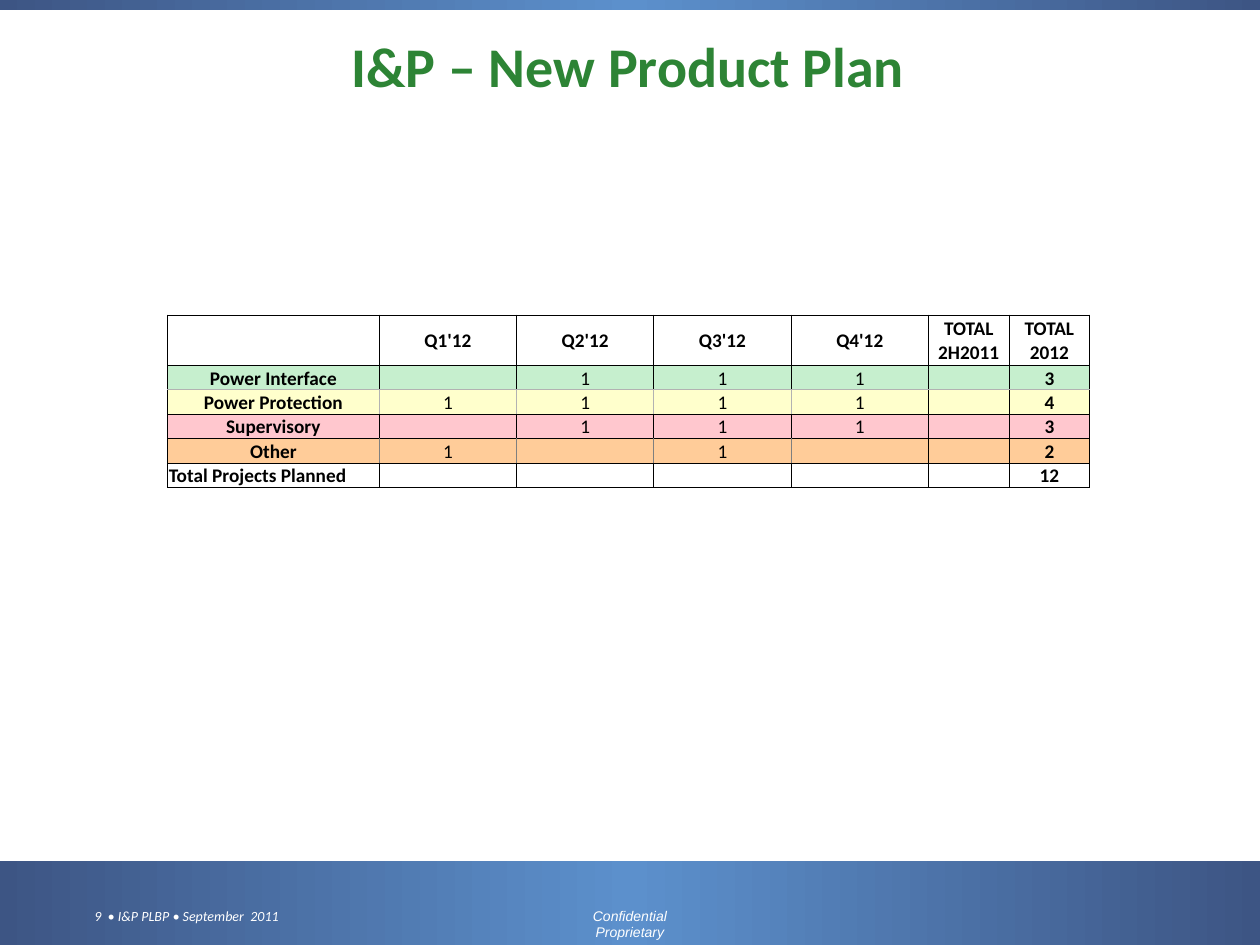
from copy import deepcopy

from lxml import etree
from pptx import Presentation
from pptx import util as u
from pptx.dml.color import RGBColor
from pptx.enum import shapes, text
from pptx.oxml.ns import qn

NAVY = RGBColor(0x3D, 0x55, 0x84)
SKY = RGBColor(0x5C, 0x90, 0xCC)
GREEN = RGBColor(0x2D, 0x84, 0x35)
WHITE = RGBColor(0xFF, 0xFF, 0xFF)
BLACK = RGBColor(0, 0, 0)
LIGHT_GRAY = RGBColor(0xB2, 0xB2, 0xB2)
GRAY = RGBColor(0x7F, 0x7F, 0x7F)
MINT = RGBColor(0xC6, 0xEF, 0xCE)
CREAM = RGBColor(0xFF, 0xFF, 0xCC)
PINK = RGBColor(0xFF, 0xC7, 0xCE)
ORANGE = RGBColor(0xFF, 0xCC, 0x99)

QUARTERS = range(1, 5)
COLUMN_WIDTHS = [1.68] + [1.09] * 4 + [0.64] * 2
ROW_HEIGHTS = [0.4] + [0.19] * 5
# Cell texts, fill, colour of the lines between quarters, colour of the bottom line
PLAN_ROWS = [
    (["", "Q1'12", "Q2'12", "Q3'12", "Q4'12", "TOTAL 2H2011", "TOTAL 2012"], WHITE, BLACK, BLACK),
    (["Power Interface", "", "1", "1", "1", "", "3"], MINT, BLACK, LIGHT_GRAY),
    (["Power Protection", "1", "1", "1", "1", "", "4"], CREAM, LIGHT_GRAY, BLACK),
    (["Supervisory", "", "1", "1", "1", "", "3"], PINK, BLACK, BLACK),
    (["Other", "1", "", "1", "", "", "2"], ORANGE, GRAY, BLACK),
    (["Total Projects Planned", "", "", "", "", "", "12"], WHITE, BLACK, BLACK),
]


def format_runs(paragraph, size, color, font="Calibri", bold=False, italic=False):
    for run in paragraph.runs:
        run.font.name = font
        run.font.size = u.Pt(size)
        run.font.bold = bold
        run.font.italic = italic
        run.font.color.rgb = color


def add_band(slide, top, height):
    band = slide.shapes.add_shape(
        shapes.MSO_SHAPE.RECTANGLE, 0, u.Inches(top), u.Inches(10), u.Inches(height))
    band.shadow.inherit = False
    band.line.fill.background()
    band.fill.gradient()
    band.fill.gradient_angle = 0
    # The default gradient has two stops; a third one goes in the middle
    stops = band.fill.gradient_stops
    for stop in stops:
        stop.color.rgb = NAVY
    first = band.fill._fill._gradFill.find(qn("a:gsLst"))[0]
    first.addnext(deepcopy(first))
    middle = band.fill.gradient_stops[1]
    middle.position = 0.5
    middle.color.rgb = SKY


def add_footer(slide, left, width, words, font, alignment):
    box = slide.shapes.add_textbox(
        u.Inches(left), u.Inches(7.15), u.Inches(width), u.Inches(0.23))
    box.text_frame.word_wrap = True
    paragraph = box.text_frame.paragraphs[0]
    paragraph.text = words
    paragraph.alignment = alignment
    format_runs(paragraph, 8, WHITE, font, italic=True)


def set_title(slide, words):
    title = slide.shapes.title
    title.left, title.top = u.Inches(0.07), u.Inches(0.22)
    title.width, title.height = u.Inches(9.83), u.Inches(0.59)
    title.text_frame.text = words
    title.text_frame.vertical_anchor = text.MSO_ANCHOR.MIDDLE
    paragraph = title.text_frame.paragraphs[0]
    paragraph.alignment = text.PP_ALIGN.CENTER
    format_runs(paragraph, 32, GREEN, bold=True)


def set_borders(cell, colors):
    properties = cell._tc.get_or_add_tcPr()
    for side, color in zip("LRTB", colors):
        line = etree.SubElement(properties, qn(f"a:ln{side}"), w=str(u.Pt(0.5)))
        fill = etree.SubElement(line, qn("a:solidFill"))
        etree.SubElement(fill, qn("a:srgbClr"), val=str(color))


def fill_cell(cell, words, color, bold, alignment):
    cell.fill.solid()
    cell.fill.fore_color.rgb = color
    cell.vertical_anchor = text.MSO_ANCHOR.MIDDLE
    cell.margin_left = cell.margin_right = cell.margin_top = u.Inches(0.01)
    cell.margin_bottom = 0
    paragraph = cell.text_frame.paragraphs[0]
    paragraph.alignment = alignment
    if words:
        paragraph.text = words
        format_runs(paragraph, 11, BLACK, bold=bold)
    else:
        # Keeps an empty cell from stretching its row
        etree.SubElement(paragraph._p, qn("a:endParaRPr"), sz="1100")


def add_plan_table(slide):
    table = slide.shapes.add_table(
        len(ROW_HEIGHTS), len(COLUMN_WIDTHS), u.Inches(1.33), u.Inches(2.5),
        u.Inches(sum(COLUMN_WIDTHS)), u.Inches(sum(ROW_HEIGHTS))).table
    for column, width in zip(table.columns, COLUMN_WIDTHS):
        column.width = u.Inches(width)
    for row, height in zip(table.rows, ROW_HEIGHTS):
        row.height = u.Inches(height)

    top = BLACK
    last_row = len(PLAN_ROWS) - 1
    for i, (words, color, inner, bottom) in enumerate(PLAN_ROWS):
        for j, word in enumerate(words):
            cell = table.cell(i, j)
            left = inner if j in QUARTERS else BLACK
            right = inner if j + 1 in QUARTERS else BLACK
            set_borders(cell, (left, right, top, bottom))
            is_total_label = i == last_row and j == 0
            alignment = text.PP_ALIGN.LEFT if is_total_label else text.PP_ALIGN.CENTER
            fill_cell(cell, word, color, i == 0 or j not in QUARTERS, alignment)
        top = bottom


def main():
    presentation = Presentation()
    presentation.slide_width = u.Inches(10)
    presentation.slide_height = u.Inches(7.5)
    slide = presentation.slides.add_slide(presentation.slide_layouts[5])

    # Bands and footer
    add_band(slide, 6.83, 0.67)
    add_footer(slide, 0.65, 2.66, "9  • I&P PLBP • September  2011",
               "Calibri", text.PP_ALIGN.LEFT)
    add_footer(slide, 4.33, 1.34, "Confidential Proprietary",
               "Arial", text.PP_ALIGN.CENTER)
    add_band(slide, 0, 0.08)

    # Title and plan
    set_title(slide, "I&P – New Product Plan")
    add_plan_table(slide)
    presentation.save("out.pptx")


if __name__ == "__main__":
    main()
